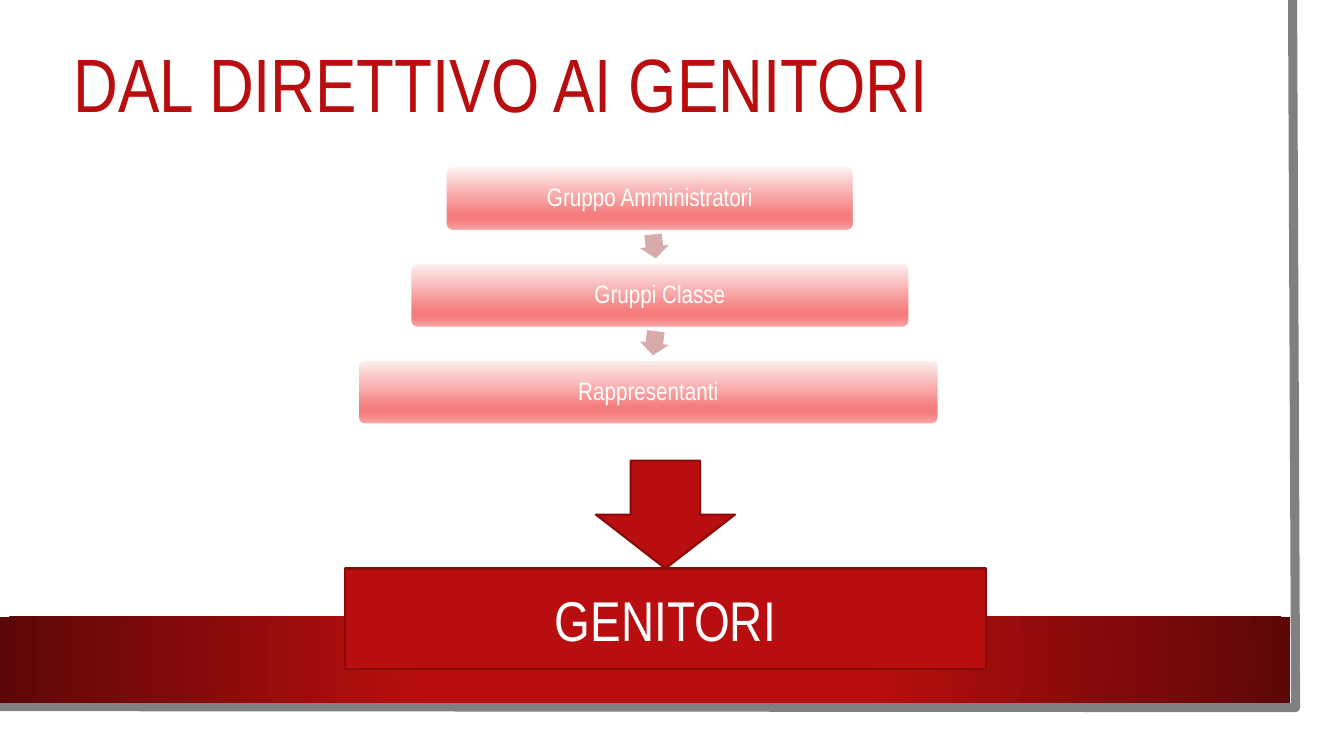
import pptx
import pptx.dml.color
import pptx.enum.shapes
import pptx.enum.text
import pptx.oxml
import pptx.oxml.ns
import pptx.util

Inches = pptx.util.Inches
Pt = pptx.util.Pt
SHAPE = pptx.enum.shapes.MSO_SHAPE
ALIGN = pptx.enum.text.PP_ALIGN

RED = "B80E0F"
DARK_RED = "880A0B"
WHITE = "FFFFFF"
GREY = "808080"
PALE_RED = "D8ABAB"
BAND_STOPS = [(34, RED), (100, "5C0707")]
STEP_STOPS = [(0, "FEF1F1"), (74, "F57D7D"), (83, "F57D7D"), (100, "F8A8A8")]
LINEAR = '<a:lin ang="5400000" scaled="0"/>'
CIRCULAR = ('<a:path path="circle"><a:fillToRect l="50000" t="50000" '
            'r="50000" b="50000"/></a:path>')


def color(value):
    return pptx.dml.color.RGBColor.from_string(value)


class SlideBuilder:
    font = "Arial Narrow"

    def __init__(self, page):
        self.page = page

    def label(self, shape, text, size, ink, align, spacing=1.0):
        frame = shape.text_frame
        frame.word_wrap = True
        frame.auto_size = pptx.enum.text.MSO_AUTO_SIZE.NONE
        frame.vertical_anchor = pptx.enum.text.MSO_ANCHOR.MIDDLE
        frame.text = text
        para = frame.paragraphs[0]
        para.alignment = align
        para.line_spacing = spacing
        para.space_before = Pt(0)
        span = para.runs[0]
        span.font.name = self.font
        span.font.size = Pt(size)
        span.font.color.rgb = color(ink)

    def title(self, text, left, top, width, height):
        title = self.page.shapes.title
        title.left, title.top = Inches(left), Inches(top)
        title.width, title.height = Inches(width), Inches(height)
        self.label(title, text, 54, RED, ALIGN.LEFT, 0.9)

    def outline(self, shape, ink, width):
        if ink is None:
            shape.line.fill.background()
        else:
            shape.line.color.rgb = color(ink)
            shape.line.width = Pt(width)

    def shape(self, kind, left, top, width, height, fill=WHITE, line=None):
        shape = self.page.shapes.add_shape(
            kind, Inches(left), Inches(top), Inches(width), Inches(height))
        shape.shadow.inherit = False
        shape.fill.solid()
        shape.fill.fore_color.rgb = color(fill)
        self.outline(shape, line, 1.5)
        return shape

    def gradient(self, shape, stops, direction):
        shape.fill.gradient()
        old = shape.element.spPr.find(pptx.oxml.ns.qn("a:gradFill"))
        marks = "".join(
            f'<a:gs pos="{position * 1000}"><a:srgbClr val="{ink}"/></a:gs>'
            for position, ink in stops)
        new = pptx.oxml.parse_xml(
            f'<a:gradFill {pptx.oxml.ns.nsdecls("a")} rotWithShape="1">'
            f'<a:gsLst>{marks}</a:gsLst>{direction}</a:gradFill>')
        old.getparent().replace(old, new)

    def open_line(self, points, ink, width):
        corners = [(Inches(x), Inches(y)) for x, y in points]
        builder = self.page.shapes.build_freeform(*corners[0])
        builder.add_line_segments(corners[1:], close=False)
        edge = builder.convert_to_shape()
        edge.shadow.inherit = False
        edge.fill.background()
        self.outline(edge, ink, width)

    def step(self, text, left, top, width):
        box = self.shape(SHAPE.ROUNDED_RECTANGLE, left, top, width, 0.64, line=WHITE)
        box.adjustments[0] = 0.1
        self.gradient(box, STEP_STOPS, LINEAR)
        self.label(box, text, 18, WHITE, ALIGN.CENTER, 0.9)

    def small_arrow(self, left, top, rotation):
        arrow = self.shape(SHAPE.RIGHT_ARROW, left, top, 0.24, 0.29, PALE_RED)
        arrow.adjustments[0] = 0.6
        arrow.rotation = rotation


def main():
    deck = pptx.Presentation()
    deck.slide_width, deck.slide_height = Inches(13.33), Inches(7.5)
    slide = SlideBuilder(deck.slides.add_slide(deck.slide_layouts[5]))

    # Sheet with grey edge and red band
    slide.shape(SHAPE.RECTANGLE, 0, 0, 13.1, 7.27)
    slide.open_line([(12.82, 0), (12.85, 7.02), (-0.03, 7.01)], GREY, 6.5)
    band = slide.shape(SHAPE.RECTANGLE, 0, 6.12, 12.8, 0.85)
    slide.gradient(band, BAND_STOPS, CIRCULAR)

    # Title, moved above the band in stacking order
    title = slide.page.shapes.title.element
    title.getparent().append(title)
    slide.title("DAL DIRETTIVO AI GENITORI", 0.63, 0.24, 11.37, 1.26)

    # Chain of groups: label, left, width, rotation of the arrow below
    steps = [
        ("Gruppo Amministratori", 4.42, 4.05, 83.8),
        ("Gruppi Classe", 4.07, 4.95, 96.9),
        ("Rappresentanti", 3.55, 5.76, None),
    ]
    for index, (text, left, width, rotation) in enumerate(steps):
        top = 1.65 + index * 0.96
        slide.step(text, left, top, width)
        if rotation is not None:
            slide.small_arrow(6.37, top + 0.65, rotation)

    # Parents
    parents = slide.shape(SHAPE.RECTANGLE, 3.42, 5.64, 6.36, 1, RED, DARK_RED)
    slide.label(parents, "GENITORI", 40, WHITE, ALIGN.CENTER)
    slide.shape(SHAPE.DOWN_ARROW, 5.91, 4.57, 1.38, 1.07, RED, DARK_RED)

    deck.save("out.pptx")


if __name__ == "__main__":
    main()
